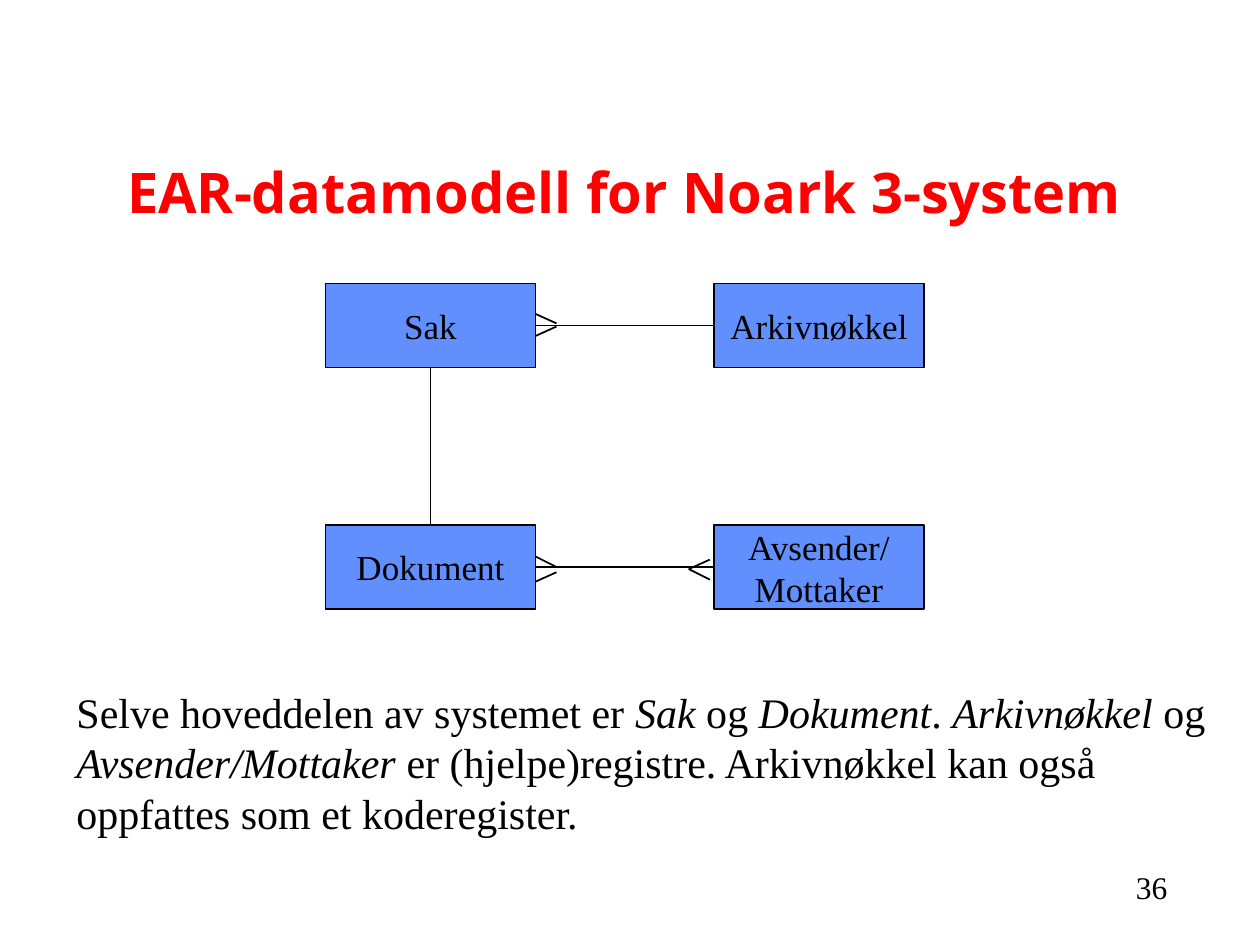
from lxml import etree
from pptx import Presentation
from pptx.dml.color import RGBColor
from pptx.enum.shapes import MSO_CONNECTOR, MSO_SHAPE
from pptx.enum.text import MSO_ANCHOR, PP_ALIGN
from pptx.oxml.ns import qn
from pptx.util import Pt

PX = 7620
BLACK = RGBColor(0x00, 0x00, 0x00)
RED = RGBColor(0xFF, 0x00, 0x00)
BLUE = RGBColor(0x61, 0x8F, 0xFD)
WHITE = RGBColor(0xFF, 0xFF, 0xFF)
SERIF, SANS = "Times New Roman", "Open Sans"
LEFT, CENTER = PP_ALIGN.LEFT, PP_ALIGN.CENTER
TOP, MIDDLE, BOTTOM = MSO_ANCHOR.TOP, MSO_ANCHOR.MIDDLE, MSO_ANCHOR.BOTTOM
RECT, STRAIGHT = MSO_SHAPE.RECTANGLE, MSO_CONNECTOR.STRAIGHT
BOX_W, BOX_H = 200, 80
COL_1, COL_2 = 310, 680
ROW_1, ROW_2 = 270, 500


def add_run(p, text, size, font=SERIF, color=BLACK, bold=False, italic=False):
    r = p.add_run()
    r.text = text
    r.font.size = Pt(size)
    r.font.name = font
    r.font.color.rgb = color
    r.font.bold = bold
    r.font.italic = italic


def add_textbox(x, y, w, h, anchor=TOP, align=LEFT):
    tf = s.shapes.add_textbox(x * PX, y * PX, w * PX, h * PX).text_frame
    tf.word_wrap = True
    tf.vertical_anchor = anchor
    p = tf.paragraphs[0]
    p.alignment = align
    return p


prs = Presentation()
prs.slide_width, prs.slide_height = 1200 * PX, 900 * PX
s = prs.slides.add_slide(prs.slide_layouts[6])
s.background.fill.solid()
s.background.fill.fore_color.rgb = WHITE

p = add_textbox(1070, 821, 70, 48)
add_run(p, "36", 18)

p = add_textbox(70, 100, 1050, 120, BOTTOM, CENTER)
add_run(p, "EAR-datamodell for Noark 3-system", 32, SANS, RED, bold=True)

entities = [
    (COL_1, ROW_1, ["Sak"]),
    (COL_1, ROW_2, ["Dokument"]),
    (COL_2, ROW_2, ["Avsender/", "Mottaker"]),
    (COL_2, ROW_1, ["Arkivnøkkel"]),
]
for x, y, lines in entities:
    sp = s.shapes.add_shape(RECT, x * PX, y * PX, BOX_W * PX, BOX_H * PX)
    sp.shadow.inherit = False
    sp.fill.solid()
    sp.fill.fore_color.rgb = BLUE
    sp.line.color.rgb = BLACK
    sp.line.width = Pt(1)
    tf = sp.text_frame
    tf.word_wrap = False
    tf.vertical_anchor = MIDDLE
    for i, line in enumerate(lines):
        p = tf.add_paragraph() if i else tf.paragraphs[0]
        p.alignment = CENTER
        add_run(p, line, 20)

edge = COL_1 + BOX_W
mid_x = COL_1 + BOX_W // 2
mid_1, mid_2 = ROW_1 + BOX_H // 2, ROW_2 + BOX_H // 2
relations = [
    (mid_x, ROW_1 + BOX_H, mid_x, ROW_2),
    (edge, mid_1, COL_2, mid_1),
    (edge, mid_2, COL_2, mid_2),
]
crow_feet = [
    (edge, 299, 530, 308),
    (530, 311, edge, 320),
    (edge, 530, 530, 540),
    (530, 545, edge, 554),
    (656, 542, 676, 552),
    (656, 542, 676, 533),
]
for ends in relations + crow_feet:
    line = s.shapes.add_connector(STRAIGHT, *[v * PX for v in ends])
    line.line.color.rgb = BLACK
    line.line.width = Pt(1)
    etree.SubElement(line._element.spPr, qn("a:effectLst"))

p = add_textbox(61, 648, 1115, 206)
body = [
    ("Selve hoveddelen av systemet er ", False),
    ("Sak ", True),
    ("og ", False),
    ("Dokument", True),
    (". ", False),
    ("Arkivnøkkel ", True),
    ("og ", False),
    ("Avsender/Mottaker ", True),
    ("er (hjelpe)registre. Arkivnøkkel kan også oppfattes som et koderegister.", False),
]
for text, italic in body:
    add_run(p, text, 24, italic=italic)

prs.save("out.pptx")
